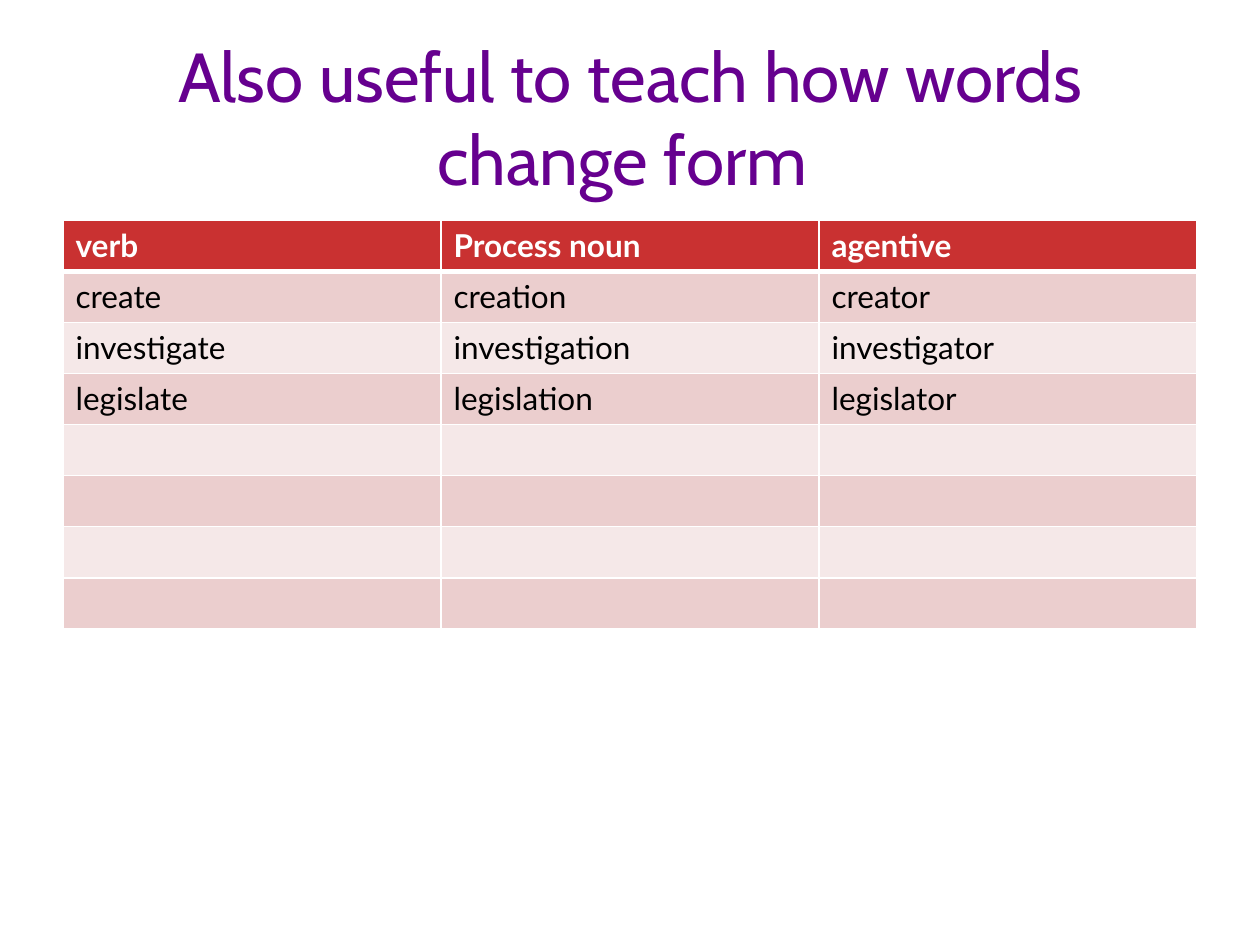
import dataclasses

import lxml.etree
import pptx
import pptx.dml.color
import pptx.enum.text
import pptx.oxml.ns
import pptx.util
from pptx.util import Inches


@dataclasses.dataclass(frozen=True)
class Theme:
    """Hold the colours, fonts and sizes of the slide."""
    title: str = "66008F"
    header: str = "C93131"
    bands: tuple = ("F5E8E8", "EBCECE")
    light: str = "FFFFFF"
    dark: str = "000000"
    title_font: str = "Cabin"
    body_font: str = "Lato"
    title_size: float = 39.6
    body_size: float = 18
    rule: float = 1
    header_rule: float = 3


THEME = Theme()
WORDS = [
    ("verb", "Process noun", "agentive"),
    ("create", "creation", "creator"),
    ("investigate", "investigation", "investigator"),
    ("legislate", "legislation", "legislator"),
]
ROWS = 8


def rgb(value):
    """Turn a hex string into a colour."""
    return pptx.dml.color.RGBColor.from_string(value)


def add_text(tf, text, *, font, size, color, bold=False, align=pptx.enum.text.PP_ALIGN.LEFT):
    """Write one formatted run in the first paragraph of a text frame."""
    p = tf.paragraphs[0]
    p.alignment = align
    r = p.add_run()
    r.text = text
    r.font.name = font
    r.font.size = pptx.util.Pt(size)
    r.font.bold = bold
    r.font.color.rgb = rgb(color)


def set_borders(cell, color, **widths):
    """Draw cell borders, given in the order L, R, T, B."""
    qn = pptx.oxml.ns.qn
    tcPr = cell._tc.get_or_add_tcPr()
    for i, (side, width) in enumerate(widths.items()):
        ln = lxml.etree.Element(qn(f"a:ln{side}"), w=str(pptx.util.Pt(width)))
        fill = lxml.etree.SubElement(ln, qn("a:solidFill"))
        lxml.etree.SubElement(fill, qn("a:srgbClr"), val=color)
        tcPr.insert(i, ln)


def build_title(s, left, top, width, height):
    """Place the slide title in its box."""
    sp = s.shapes.title
    sp.left, sp.top, sp.width, sp.height = left, top, width, height
    tf = sp.text_frame
    tf.word_wrap = True
    tf.auto_size = pptx.enum.text.MSO_AUTO_SIZE.NONE
    tf.vertical_anchor = pptx.enum.text.MSO_ANCHOR.MIDDLE
    add_text(tf, "Also useful to teach how words change form ",
             font=THEME.title_font, size=THEME.title_size, color=THEME.title,
             align=pptx.enum.text.PP_ALIGN.CENTER)


def build_word_table(s, left, top, width, height):
    """Place the table of word forms, with spare rows below the words."""
    table = s.shapes.add_table(ROWS, len(WORDS[0]), left, top, width, height).table
    for i, row in enumerate(table.rows):
        row.height = height // ROWS
        is_header = i == 0
        words = WORDS[i] if i < len(WORDS) else ()
        for j, cell in enumerate(row.cells):
            cell.fill.solid()
            cell.fill.fore_color.rgb = rgb(THEME.header if is_header else THEME.bands[i % 2])
            set_borders(cell, THEME.light, L=THEME.rule, R=THEME.rule,
                        T=THEME.header_rule if i == 1 else THEME.rule,
                        B=THEME.header_rule if is_header else THEME.rule)
            if words:
                add_text(cell.text_frame, words[j], font=THEME.body_font,
                         size=THEME.body_size, bold=is_header,
                         color=THEME.light if is_header else THEME.dark)


def main():
    """Build the slide and save it."""
    prs = pptx.Presentation()
    prs.slide_width, prs.slide_height = Inches(10), Inches(7.5)
    s = prs.slides.add_slide(prs.slide_layouts.get_by_name("Title Only"))
    build_title(s, Inches(0.5), Inches(0.3), Inches(9), Inches(1.25))
    build_word_table(s, Inches(0.5), Inches(1.75), Inches(9), Inches(3.24))
    prs.save("out.pptx")


if __name__ == "__main__":
    main()
